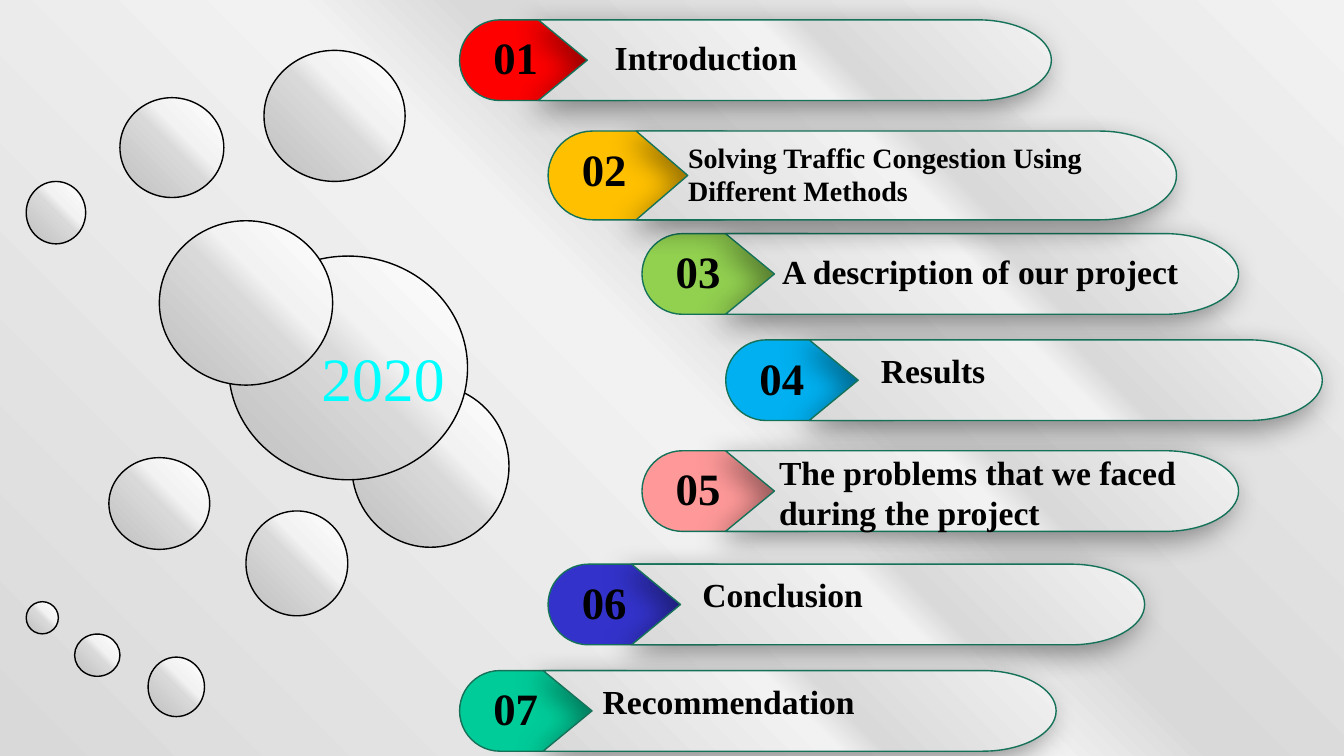
from lxml import etree
from pptx import Presentation
from pptx.dml.color import RGBColor
from pptx.enum.shapes import MSO_SHAPE
from pptx.enum.text import MSO_AUTO_SIZE
from pptx.oxml.ns import qn
from pptx.util import Pt

OVAL = MSO_SHAPE.OVAL
ROUND = MSO_SHAPE.ROUNDED_RECTANGLE
GROW = MSO_AUTO_SIZE.SHAPE_TO_FIT_TEXT

FONT = "Times New Roman"
EDGE = "157259"
SHEEN = [(0, "D9D9D9"), (50, "F2F2F2"), (58, "D9D9D9"), (100, "F2F2F2")]
GLOSS = [(0, "BFBFBF"), (50, "D9D9D9"), (62, "F2F2F2"), (100, "FFFFFF")]

BUBBLES = [
    (251.3, 275, 112.3, 115.9), (163.4, 182.9, 170.6, 159.8),
    (85.7, 69.8, 74.2, 71.3), (188.6, 36, 100.8, 93.6),
    (18.7, 129.6, 42.5, 44.6), (113.8, 157.7, 123.8, 117.4),
    (175.7, 365, 72.7, 74.9), (77.8, 326.9, 72, 65.5),
    (105.8, 469.4, 40.3, 42.5), (53.3, 452.9, 32.4, 30.2),
    (18.7, 429.8, 23, 23),
]
YEAR = ("2020", (222.5, 239, 128.2, 60.5))

# tab width, bar width, height
SLIM = (146.9, 366.5, 57.6)
BROAD = (154.8, 386, 63.4)

# number, title, size, colour, (left, top), bar offset, measures, title box
ROWS = [
    ("01", "Introduction", 24, "FF0000", (328.3, 14.2), 56.2, SLIM,
     (432, 23, 206.6, 36)),
    ("03", "A description of our project", 24, "92D050", (458.6, 166.9), 59.6, SLIM,
     (551.5, 175.7, 303.1, 36)),
    ("04", "Results", 24, "00B0F0", (518.4, 242.8), 59.6, SLIM,
     (622.1, 246.4, 206.6, 36)),
    ("05", "The problems that we faced during the project", 24, "FF9999",
     (458.6, 322), 59.6, SLIM, (549.4, 319, 316.1, 65.5)),
    ("06", "Conclusion", 24, "3333CC", (391.5, 403), 59.6, SLIM,
     (494.6, 406.4, 206.6, 36)),
    ("07", "Recommendation", 24, "00CC99", (328.3, 479), 59.6, SLIM,
     (423.4, 482.6, 309.6, 36)),
    ("02", "Solving Traffic Congestion Using Different Methods", 20, "FFC000",
     (391.5, 93.6), 62.9, BROAD, (484.4, 96.5, 322.6, 55.4)),
]
NOTCH, CAP, BEND = 35, 52.4, 0.55


def color(code):
    return RGBColor.from_string(code)


def add(root, tag, **attrs):
    return etree.SubElement(root, qn(tag), attrs)


def grade(fill, root, stops):
    fill.gradient()
    fill.gradient_angle = 45
    ramp = root.find(".//" + qn("a:gsLst"))
    for stop in list(ramp):
        ramp.remove(stop)
    for spot, code in stops:
        stop = add(ramp, "a:gs", pos=str(spot * 1000))
        add(stop, "a:srgbClr", val=code)


def style(shape, fill, line):
    shape.shadow.inherit = False
    if isinstance(fill, str):
        shape.fill.solid()
        shape.fill.fore_color.rgb = color(fill)
    else:
        grade(shape.fill, shape._element, fill)
    shape.line.color.rgb = color(line)
    shape.line.width = Pt(1)


def write(shapes, text, box, size=24, code="000000", bold=True, rim=None):
    frame = shapes.add_textbox(*map(Pt, box)).text_frame
    frame.word_wrap = True
    frame.auto_size = GROW
    run = frame.paragraphs[0].add_run()
    run.text = text
    font = run.font
    font.name, font.size, font.bold = FONT, Pt(size), bold
    font.color.rgb = color(code)
    if rim:
        props = run._r.get_or_add_rPr()
        line = add(props, "a:ln", w=str(Pt(0.75)))
        add(add(line, "a:solidFill"), "a:srgbClr", val=rim)
        props.insert(0, line)


def cast(shape):
    effects = shape._element.spPr.find(qn("a:effectLst"))
    shade = add(effects, "a:outerShdw", blurRad=str(Pt(20)), dist=str(Pt(8)),
                dir="8100000", algn="tr", rotWithShape="0")
    add(add(shade, "a:srgbClr", val="000000"), "a:alpha", val="40000")


def curve(line, *pulls):
    line.tag = qn("a:cubicBezTo")
    end = line[0]
    for x, y in pulls:
        end.addprevious(etree.Element(qn("a:pt"), x=str(Pt(x)), y=str(Pt(y))))


def draw_bar(shapes, left, top, wide, high):
    grow, half = wide / SLIM[1], high / 2
    cap = CAP * grow
    hub = wide - cap
    points = [(hub, 0), (wide, half), (hub, high), (0, high), (NOTCH * grow, half)]
    path = shapes.build_freeform(Pt(left), Pt(top))
    path.add_line_segments([(Pt(left + x), Pt(top + y)) for x, y in points], close=True)
    bar = path.convert_to_shape()
    lines = bar._element.findall(".//" + qn("a:lnTo"))
    near, rise = hub + BEND * cap, BEND * half
    curve(lines[1], (near, 0), (wide, half - rise))
    curve(lines[2], (wide, half + rise), (near, high))
    style(bar, SHEEN, EDGE)
    cast(bar)


def draw_row(shapes, num, title, size, code, start, gap, spans, box):
    left, top = start
    wide, reach, high = spans
    tab = shapes.add_shape(ROUND, Pt(left), Pt(top), Pt(wide), Pt(high))
    tab.adjustments[0] = 0.5
    style(tab, code, EDGE)
    draw_bar(shapes, left + gap, top, reach, high)
    spot = (left + 17, top + high / 15, wide * 0.39, high * 0.8)
    write(shapes, num, spot, size=32, rim="FFFFFF")
    write(shapes, title, box, size=size)


def main():
    deck = Presentation()
    deck.slide_width, deck.slide_height = Pt(960), Pt(540)
    slide = deck.slides.add_slide(deck.slide_layouts[6])
    grade(slide.background.fill, slide._element, SHEEN)
    for box in BUBBLES:
        style(slide.shapes.add_shape(OVAL, *map(Pt, box)), GLOSS, "000000")
    for row in ROWS:
        draw_row(slide.shapes.add_group_shape().shapes, *row)
    write(slide.shapes, *YEAR, size=44, code="00FFFF", bold=False)
    deck.save("out.pptx")


if __name__ == "__main__":
    main()
